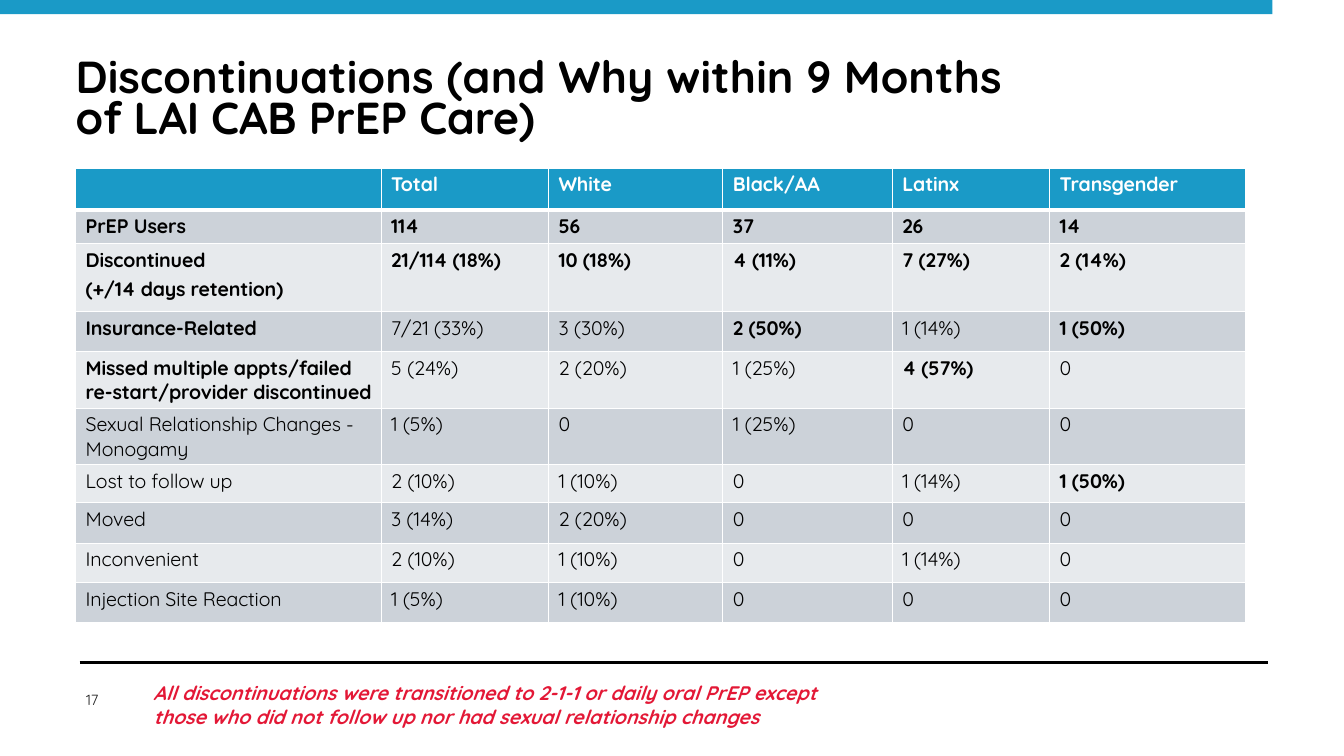
from dataclasses import dataclass

from lxml import etree
from pptx import Presentation
from pptx.dml.color import RGBColor
from pptx.enum import shapes, text
from pptx.oxml import ns
from pptx.util import Inches, Pt


@dataclass(frozen=True)
class Theme:
    font: str = "Quicksand"
    blue: str = "1A9AC7"
    black: str = "000000"
    white: str = "FFFFFF"
    red: str = "E31836"
    number_gray: str = "1F1F1F"
    bands: tuple = ("CCD2D9", "E7EAED")
    title_size: float = 32
    body_size: float = 14
    number_size: float = 10.5


HEADINGS = ["", "Total", "White", "Black/AA", "Latinx", "Transgender"]
REASONS = [
    ["PrEP Users", "114", "56", "37", "26", "14"],
    ["Discontinued\n(+/14 days retention)", "21/114 (18%)", "10 (18%)", "4 (11%)", "7 (27%)", "2 (14%)"],
    ["Insurance-Related", "7/21 (33%)", "3 (30%)", "2 (50%)", "1 (14%)", "1 (50%)"],
    ["Missed multiple appts/failed re-start/provider discontinued",
     "5 (24%)", "2 (20%)", "1 (25%)", "4 (57%)", "0"],
    ["Sexual Relationship Changes - Monogamy", "1 (5%)", "0", "1 (25%)", "0", "0"],
    ["Lost to follow up", "2 (10%)", "1 (10%)", "0", "1 (14%)", "1 (50%)"],
    ["Moved", "3 (14%)", "2 (20%)", "0", "0", "0"],
    ["Inconvenient", "2 (10%)", "1 (10%)", "0", "1 (14%)", "0"],
    ["Injection Site Reaction", "1 (5%)", "1 (10%)", "0", "0", "0"],
]
COLUMN_WIDTHS = [3.03, 1.66, 1.73, 1.68, 1.56, 1.94]
ROW_HEIGHTS = [0.41, 0.34, 0.67, 0.4, 0.56, 0.56, 0.38, 0.4, 0.39, 0.4]
MAJORITY_SHARES = ("(50%)", "(57%)")


def is_emphasized(row, column, words):
    """Bold the summary rows, the leading reasons and every share of half or more."""
    return row <= 2 or (row <= 4 and column == 0) or words.endswith(MAJORITY_SHARES)


class SlideBuilder:
    def __init__(self, slide, theme):
        self.slide = slide
        self.theme = theme

    def format_runs(self, frame, size, color, bold=False, italic=False, tracking=(0,)):
        """Style every run; tracking in points is cycled over a paragraph's runs."""
        for paragraph in frame.paragraphs:
            for index, run in enumerate(paragraph.runs):
                run.font.name = self.theme.font
                run.font.size = Pt(size)
                run.font.bold = bold
                run.font.italic = italic
                run.font.color.rgb = RGBColor.from_string(color)
                spacing = round(100 * tracking[index % len(tracking)])
                run._r.get_or_add_rPr().set("spc", str(spacing))

    def bar(self, left, top, width, height, color):
        bar = self.slide.shapes.add_shape(
            shapes.MSO_SHAPE.RECTANGLE, Inches(left), Inches(top), Inches(width), Inches(height))
        bar.shadow.inherit = False
        bar.fill.solid()
        bar.fill.fore_color.rgb = RGBColor.from_string(color)
        bar.line.fill.background()

    def rule(self, left, right, y, color, weight):
        rule = self.slide.shapes.add_connector(
            shapes.MSO_CONNECTOR.STRAIGHT, Inches(left), Inches(y), Inches(right), Inches(y))
        rule.line.color.rgb = RGBColor.from_string(color)
        rule.line.width = Pt(weight)
        etree.SubElement(rule._element.spPr, ns.qn("a:effectLst"))

    def text(self, words, box, margins, size, color, wrap=True, **style):
        """Add a text box; margins are left, top, right, bottom. Returns its frame."""
        frame = self.slide.shapes.add_textbox(*map(Inches, box)).text_frame
        frame.word_wrap = wrap
        frame.margin_left, frame.margin_top, frame.margin_right, frame.margin_bottom = map(Inches, margins)
        frame.text = words
        self.format_runs(frame, size, color, **style)
        return frame

    def cell_borders(self, cell, top, bottom):
        properties = cell._tc.get_or_add_tcPr()
        for side, weight in (("L", 1), ("R", 1), ("T", top), ("B", bottom)):
            border = etree.SubElement(properties, ns.qn(f"a:ln{side}"), w=str(Pt(weight)))
            fill = etree.SubElement(border, ns.qn("a:solidFill"))
            etree.SubElement(fill, ns.qn("a:srgbClr"), val=self.theme.white)

    def table(self, left, top, rows, widths, heights):
        table = self.slide.shapes.add_table(
            len(rows), len(widths), Inches(left), Inches(top),
            Inches(sum(widths)), Inches(sum(heights))).table
        for column, width in zip(table.columns, widths):
            column.width = Inches(width)
        for row, height in zip(table.rows, heights):
            row.height = Inches(height)
        for row, entries in enumerate(rows):
            for column, words in enumerate(entries):
                self.cell(table.cell(row, column), row, column, words)

    def cell(self, cell, row, column, words):
        theme = self.theme
        is_header = row == 0
        self.cell_borders(cell, top=3 if row == 1 else 1, bottom=3 if is_header else 1)
        cell.fill.solid()
        fill = theme.blue if is_header else theme.bands[(row - 1) % 2]
        cell.fill.fore_color.rgb = RGBColor.from_string(fill)
        cell.margin_left, cell.margin_top = Inches(0.1), Inches(0.04)
        cell.margin_right = cell.margin_bottom = 0
        cell.text_frame.text = words
        for paragraph in cell.text_frame.paragraphs[1:]:
            paragraph.space_before = Pt(3.1)
        self.format_runs(cell.text_frame, theme.body_size, theme.white if is_header else theme.black,
                         bold=is_emphasized(row, column, words), tracking=(-0.1,))


def main():
    theme = Theme()
    deck = Presentation()
    deck.slide_width, deck.slide_height = Inches(13.33), Inches(7.5)
    builder = SlideBuilder(deck.slides.add_slide(deck.slide_layouts[6]), theme)

    builder.bar(0, 0, 12.62, 0.14, theme.blue)
    builder.rule(0.79, 12.58, 6.57, theme.black, 2)

    page_number = builder.text("17", (0.79, 6.81, 0.25, 0.26), (0, 0, 0, 0),
                               theme.number_size, theme.number_gray, wrap=False)
    page_number.vertical_anchor = text.MSO_ANCHOR.MIDDLE
    page_number.paragraphs[0].alignment = text.PP_ALIGN.CENTER

    title = builder.text("Discontinuations (and Why within 9 Months\vof LAI CAB PrEP Care)",
                         (0.75, 0.51, 11.83, 1.16), (0, 0.1, 0, 0),
                         theme.title_size, theme.black, bold=True, tracking=(0.1, -0.2))
    title.paragraphs[0].line_spacing = Pt(29.3)

    builder.text("All discontinuations were transitioned to 2-1-1 or daily oral PrEP except "
                 "those who did not follow up nor had sexual relationship changes",
                 (0.75, 6.71, 7.71, 0.57), (0.77, 0.05, 0.1, 0.05),
                 theme.body_size, theme.red, bold=True, italic=True)

    builder.table(0.75, 1.67, [HEADINGS, *REASONS], COLUMN_WIDTHS, ROW_HEIGHTS)
    deck.save("out.pptx")


if __name__ == "__main__":
    main()
